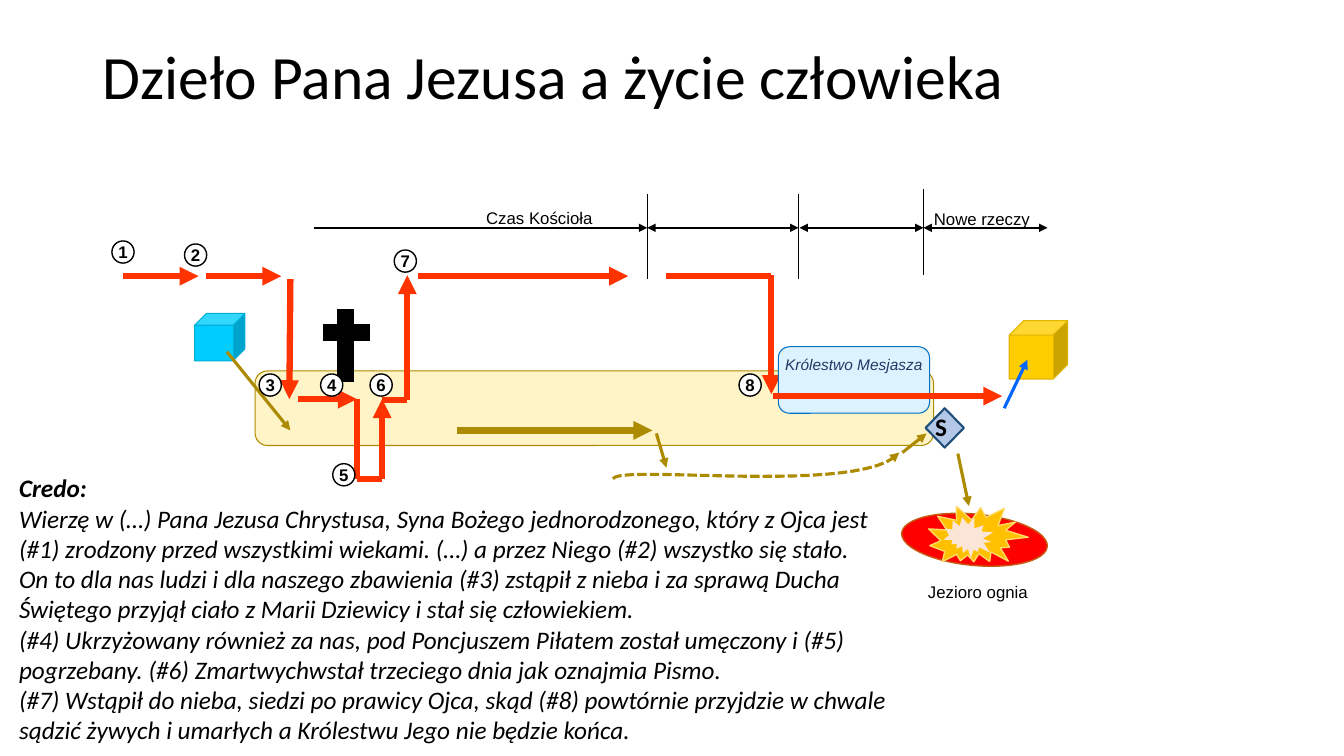
"""Build the slide about the work of Jesus and human life."""
import dataclasses
import typing

import lxml.etree
import pptx
import pptx.dml.color
import pptx.enum.dml
import pptx.enum.shapes
import pptx.enum.text
import pptx.oxml.ns
import pptx.util

Preset = pptx.enum.shapes.MSO_SHAPE
Align = pptx.enum.text.PP_ALIGN
Anchor = pptx.enum.text.MSO_ANCHOR
Point = tuple[float, float]
COLUMN = ROW = pptx.util.Inches(1)
SLIDE_COLUMNS, SLIDE_ROWS = 13.33, 7.5


@dataclasses.dataclass(frozen=True)
class Theme:
    black: str = "000000"
    white: str = "FFFFFF"
    red: str = "FF3300"
    gold: str = "AD8B00"
    blue: str = "0066FF"
    navy: str = "203864"
    heading_font: str = "Calibri"
    label_font: str = "Arial"
    title_size: float = 44
    body_size: float = 18
    label_size: float = 12
    small_size: float = 11


THEME = Theme()


@dataclasses.dataclass(frozen=True)
class Style:
    size: float
    font: str = THEME.label_font
    color: str = THEME.black
    bold: bool = False
    italic: bool = False
    align: Align = Align.CENTER
    spacing: float = 1.0
    before: float = 0


@dataclasses.dataclass(frozen=True)
class Box:
    left: float
    top: float
    width: float
    height: float


@dataclasses.dataclass(frozen=True)
class Figure:
    preset: Preset
    box: Box
    fill: str
    line: str | None = None
    weight: float = 0.75
    rotation: float = 0


@dataclasses.dataclass(frozen=True)
class Route:
    points: tuple[Point, ...]
    color: str = THEME.red
    weight: float = 4.5
    tail: bool = True
    head: bool = False


LABEL = Style(THEME.label_size)
NUMBER = Style(THEME.label_size, bold=True)
TITLE = Style(THEME.title_size, THEME.heading_font, align=Align.LEFT, spacing=0.9)
CREDO = Style(THEME.body_size, THEME.heading_font, italic=True, align=Align.LEFT)
SYMBOL = Style(THEME.body_size, THEME.heading_font, bold=True, align=Align.LEFT, spacing=0.9)
KINGDOM = Style(THEME.small_size, color=THEME.navy, italic=True, before=5.5)

BAND = Figure(Preset.ROUNDED_RECTANGLE, Box(2.53, 3.68, 6.73, 0.74), "FFF4C7", THEME.gold)
KINGDOM_BOX = Figure(Preset.ROUNDED_RECTANGLE, Box(7.72, 3.44, 1.5, 0.66), "DDF2FF", "0070C0")
DIAMOND = Figure(Preset.DIAMOND, Box(9.18, 4.05, 0.38, 0.39), "B4C7E7", "1F4E79", 1.5)
FIGURES = (
    Figure(Preset.FLOWCHART_CONNECTOR, Box(8.94, 5.1, 1.45, 0.51), "FF0000", "C55A11", 1, 5.4),
    Figure(Preset.EXPLOSION2, Box(9.21, 4.98, 0.97, 0.68), "FFC000", "FFD966", 1, 16.2),
    Figure(Preset.EXPLOSION2, Box(9.38, 5.11, 0.47, 0.45), "FBE5D6", rotation=56.2),
    Figure(Preset.CUBE, Box(10.01, 3.18, 0.58, 0.58), "FFCE00", "E0B400"),
    Figure(Preset.CUBE, Box(1.93, 3.11, 0.5, 0.47), "00CCFF", "00AED8"),
)

AXIS = 2.26
ERAS = ((3.11, 6.42), (6.42, 7.92), (7.93, 9.16), (9.16, 10.39))
DIVIDERS = ((6.42, 1.92), (7.92, 1.92), (9.16, 1.88))
BACK_ROUTES = (
    *(Route(((start, AXIS), (end, AXIS)), THEME.black, 1.5, head=index > 0)
      for index, (start, end) in enumerate(ERAS)),
    *(Route(((x, top), (x, top + 0.85)), THEME.black, 0.5, tail=False) for x, top in DIVIDERS),
    Route(((4.53, 4.27), (6.47, 4.27)), THEME.gold),
    Route(((8.95, 4.49), (9.19, 4.3)), THEME.gold, 2.25),
    Route(((6.51, 4.3), (6.61, 4.64)), THEME.gold, 2.25),
    Route(((9.5, 4.5), (9.61, 5.02)), THEME.gold, 2.25),
    Route(((4.15, 2.74), (6.23, 2.74))),
    Route(((7.65, 2.73), (7.65, 3.91))),
    Route(((6.61, 2.74), (7.65, 2.74)), tail=False),
)
FRONT_ROUTES = (
    Route(((9.96, 4.05), (10.19, 3.57)), THEME.blue, 2.25),
    Route(((2.25, 3.49), (2.88, 4.27)), THEME.gold, 2.25),
    Route(((7.67, 3.93), (9.94, 3.93))),
    Route(((4.04, 3.97), (4.04, 2.73))),
    Route(((2.88, 2.77), (2.87, 3.96))),
    Route(((2.96, 3.96), (3.54, 3.96))),
    Route(((2.04, 2.74), (2.79, 2.74))),
    Route(((3.54, 3.96), (3.54, 4.75), (3.79, 4.75)), tail=False),
    Route(((3.79, 4.75), (3.79, 3.96))),
    Route(((3.79, 3.97), (4.04, 3.97)), tail=False),
    Route(((1.22, 2.74), (1.97, 2.74))),
    Route(((3.2, 3.3), (3.67, 3.3)), THEME.black, 12, tail=False),
    Route(((3.43, 3.79), (3.43, 3.07)), THEME.black, 12, tail=False),
)
CURVE = ((6.08, 4.75), (6.15, 4.6), (8.57, 4.92), (8.92, 4.49))
CURVE_STEPS = 24
LABELS = (
    ("Czas Kościoła", Box(4.63, 2.03, 1.44, 0.26)),
    ("Nowe rzeczy", Box(9.16, 2.04, 1.16, 0.26)),
    ("Jezioro ognia", Box(8.98, 5.74, 1.44, 0.26)),
)
STATIONS = ((1.11, 2.39), (1.83, 2.42), (2.57, 3.71), (3.18, 3.71),
            (3.3, 4.6), (3.67, 3.71), (3.91, 2.48), (7.33, 3.71))
STATION_SIZE = 0.22
TITLE_TEXT = "Dzieło Pana Jezusa a życie człowieka"
CREDO_HEADING = "Credo:"
CREDO_TEXTS = (
    "Wierzę w (…) Pana Jezusa Chrystusa, Syna Bożego jednorodzonego, który z Ojca jest (#1) zrodzony przed wszystkimi wiekami. (…) a przez Niego (#2) wszystko się stało.",
    "On to dla nas ludzi i dla naszego zbawienia (#3) zstąpił z nieba i za sprawą Ducha Świętego przyjął ciało z Marii Dziewicy i stał się człowiekiem.",
    "(#4) Ukrzyżowany również za nas, pod Poncjuszem Piłatem został umęczony i (#5) pogrzebany. (#6) Zmartwychwstał trzeciego dnia jak oznajmia Pismo.",
    "(#7) Wstąpił do nieba, siedzi po prawicy Ojca, skąd (#8) powtórnie przyjdzie w chwale sądzić żywych i umarłych a Królestwu Jego nie będzie końca.",
)


def place(box: Box) -> tuple[int, int, int, int]:
    return (int(box.left * COLUMN), int(box.top * ROW),
            int(box.width * COLUMN), int(box.height * ROW))


def rgb(color: str) -> pptx.dml.color.RGBColor:
    return pptx.dml.color.RGBColor.from_string(color)


def set_line(shape: typing.Any, color: str, weight: float, head: bool = False, tail: bool = False) -> None:
    shape.line.color.rgb = rgb(color)
    shape.line.width = pptx.util.Pt(weight)
    for tag, wanted in (("a:headEnd", head), ("a:tailEnd", tail)):
        if wanted:
            end = lxml.etree.SubElement(shape.line._get_or_add_ln(), pptx.oxml.ns.qn(tag))
            end.set("type", "triangle")


def write(shape: typing.Any, texts: typing.Sequence[str], style: Style, inset: Point = (0, 0),
          anchor: Anchor = Anchor.MIDDLE, wrap: bool = True, heading: str = "") -> None:
    frame = shape.text_frame
    frame.word_wrap = wrap
    frame.vertical_anchor = anchor
    frame.margin_left = frame.margin_right = int(inset[0] * COLUMN)
    frame.margin_top = frame.margin_bottom = int(inset[1] * ROW)
    for index, text in enumerate(texts):
        paragraph = frame.add_paragraph() if index else frame.paragraphs[0]
        paragraph.alignment = style.align
        paragraph.line_spacing = style.spacing
        paragraph.space_before = pptx.util.Pt(style.before)
        font = paragraph.font
        font.size, font.name = pptx.util.Pt(style.size), style.font
        font.bold, font.italic = style.bold, style.italic
        font.color.rgb = rgb(style.color)
        if heading and index == 0:
            run = paragraph.add_run()
            run.text, run.font.bold = heading, True
            paragraph.add_line_break()
        paragraph.add_run().text = text


def draw_figure(slide: typing.Any, figure: Figure) -> typing.Any:
    shape = slide.shapes.add_shape(figure.preset, *place(figure.box))
    shape.shadow.inherit = False
    shape.rotation = figure.rotation
    shape.fill.solid()
    shape.fill.fore_color.rgb = rgb(figure.fill)
    if figure.line:
        set_line(shape, figure.line, figure.weight)
    else:
        shape.line.fill.background()
    return shape


def draw_route(slide: typing.Any, route: Route) -> None:
    for start, end in zip(route.points, route.points[1:]):
        connector = slide.shapes.add_connector(
            pptx.enum.shapes.MSO_CONNECTOR.STRAIGHT,
            int(start[0] * COLUMN), int(start[1] * ROW), int(end[0] * COLUMN), int(end[1] * ROW))
        set_line(connector, route.color, route.weight, route.head, route.tail)
        lxml.etree.SubElement(connector._element.spPr, pptx.oxml.ns.qn("a:effectLst"))


def curve_point(share: float) -> Point:
    rest = 1 - share
    weights = (rest ** 3, 3 * rest ** 2 * share, 3 * rest * share ** 2, share ** 3)
    x, y = (sum(w * point[axis] for w, point in zip(weights, CURVE)) for axis in (0, 1))
    return x * COLUMN, y * ROW


def draw_curve(slide: typing.Any) -> None:
    points = [curve_point(step / CURVE_STEPS) for step in range(CURVE_STEPS + 1)]
    builder = slide.shapes.build_freeform(*points[0])
    builder.add_line_segments(points[1:], close=False)
    shape = builder.convert_to_shape()
    shape.shadow.inherit = False
    shape.fill.background()
    shape.line.dash_style = pptx.enum.dml.MSO_LINE.SQUARE_DOT
    set_line(shape, THEME.gold, 2.25, tail=True)


def main() -> None:
    presentation = pptx.Presentation()
    presentation.slide_width = int(SLIDE_COLUMNS * COLUMN)
    presentation.slide_height = int(SLIDE_ROWS * ROW)
    slide = presentation.slides.add_slide(presentation.slide_layouts[6])
    draw_figure(slide, BAND)
    for route in BACK_ROUTES:
        draw_route(slide, route)
    draw_curve(slide)
    write(draw_figure(slide, DIAMOND), ["S"], SYMBOL)
    for figure in FIGURES:
        draw_figure(slide, figure)
    write(draw_figure(slide, KINGDOM_BOX), ["Królestwo Mesjasza"], KINGDOM, (0.1, 0.05), Anchor.TOP, False)
    for route in FRONT_ROUTES:
        draw_route(slide, route)
    for text, box in LABELS:
        write(slide.shapes.add_textbox(*place(box)), [text], LABEL, (0.03, 0.03))
    title = slide.shapes.add_textbox(*place(Box(0.92, 0.4, 11.5, 0.78)))
    write(title, [TITLE_TEXT], TITLE, (0.1, 0.05))
    credo = slide.shapes.add_textbox(*place(Box(0.09, 4.64, 9.02, 2.83)))
    write(credo, CREDO_TEXTS, CREDO, (0.1, 0.05), Anchor.TOP, heading=CREDO_HEADING)
    for number, (left, top) in enumerate(STATIONS, 1):
        box = Box(left, top, STATION_SIZE, STATION_SIZE)
        circle = draw_figure(slide, Figure(Preset.OVAL, box, THEME.white, THEME.black, 1))
        write(circle, [str(number)], NUMBER, wrap=False)
    presentation.save("out.pptx")


if __name__ == "__main__":
    main()
